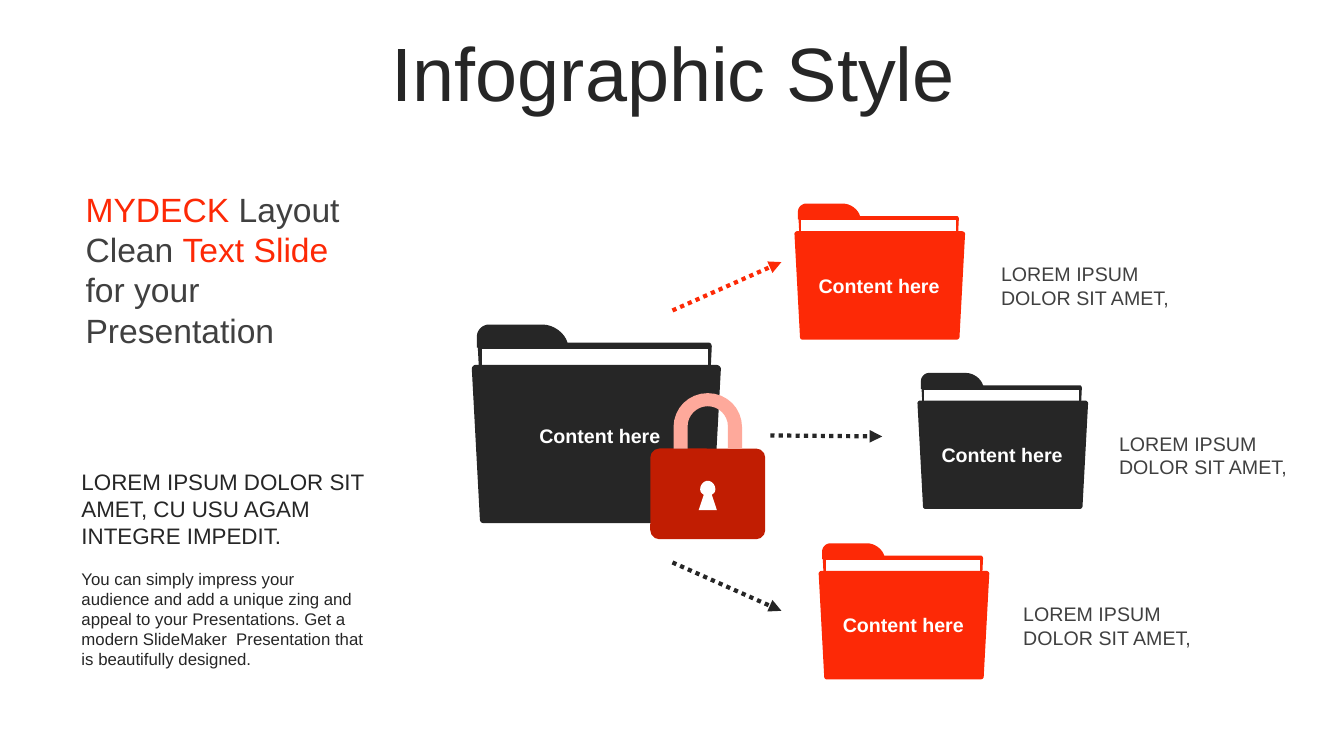
from lxml import etree
from pptx import Presentation
from pptx.dml.color import RGBColor
from pptx.enum import dml, shapes, text as txt
from pptx.oxml import ns
from pptx.util import Inches, Pt

HUES = {"dark": "262626", "gray": "404040", "red": "FD2906",
        "deep": "C11D02", "pink": "FEA99B", "white": "FFFFFF"}
STEPS = 8

# Outlines in inches: a pair is a corner, a six-tuple is a Bezier curve.
BACK = [(2.35, .18), (.95, .18), (.92, .08, .81, 0, .7, 0), (.17, 0),
        (.11, 0, .05, .05, .05, .12), (.05, .23), (.06, .23), (.13, 1.66),
        (.13, 1.68, .15, 1.7, .17, 1.7), (2.27, 1.7),
        (2.3, 1.7, 2.31, 1.68, 2.31, 1.66), (2.38, .22),
        (2.38, .2, 2.37, .18, 2.35, .18)]
PAPER = [(.1, .24), (2.34, .24), (2.34, 1.64), (.1, 1.64)]
FRONT = [(2.35, 1.97), (.12, 1.97), (.09, 1.97, .08, 1.95, .08, 1.93),
         (0, .44), (0, .42, .02, .4, .04, .4), (2.42, .4),
         (2.45, .4, 2.47, .42, 2.47, .44), (2.39, 1.93),
         (2.39, 1.95, 2.37, 1.97, 2.35, 1.97)]
SHACKLE = [(.37, .55), (.37, .33), (.37, .22, .46, .13, .57, .13),
           (.68, .13, .77, .22, .77, .33), (.77, .55), (.91, .55), (.91, .34),
           (.91, .15, .76, 0, .57, 0), (.38, 0, .23, .15, .23, .34),
           (.23, .55)]
KEYHOLE = [(.57, .87), (.61, .87, .645, .91, .645, .95),
           (.645, .97, .64, .99, .62, 1), (.61, 1.01), (.66, 1.16),
           (.48, 1.16), (.53, 1.01), (.52, 1),
           (.5, .99, .495, .97, .495, .95), (.495, .91, .53, .87, .57, .87)]


def paint(shape, hue):
    shape.shadow.inherit = False
    shape.fill.solid()
    shape.fill.fore_color.rgb = RGBColor.from_string(HUES[hue])
    shape.line.fill.background()


def write(slide, box, *paras, size=14, hue="dark", bold=False, align="LEFT",
          anchor="MIDDLE", space=None):
    """Add a text box; a paragraph is a string or a list of (text, hue)."""
    frame = slide.shapes.add_textbox(*map(Inches, box)).text_frame
    frame.word_wrap = True
    frame.vertical_anchor = getattr(txt.MSO_ANCHOR, anchor)
    for i, parts in enumerate(paras):
        para = frame.add_paragraph() if i else frame.paragraphs[0]
        para.alignment = getattr(txt.PP_ALIGN, align)
        para.line_spacing = space
        for words, tone in [(parts, hue)] if isinstance(parts, str) else parts:
            run = para.add_run()
            run.text = words
            run.font.name, run.font.size, run.font.bold = "Arial", Pt(size), bold
            run.font.color.rgb = RGBColor.from_string(HUES[tone])


def trace(steps):
    """Turn an outline into points, sampling its curves."""
    points = []
    for step in steps:
        if len(step) == 2:
            points.append(step)
            continue
        nodes = [points[-1], step[:2], step[2:4], step[4:]]
        for i in range(1, STEPS + 1):
            t = i / STEPS
            u = 1 - t
            weights = (u ** 3, 3 * u * u * t, 3 * u * t * t, t ** 3)
            points.append(tuple(sum(w * n[axis] for w, n in zip(weights, nodes))
                                for axis in (0, 1)))
    return points


def draw(slide, x, y, steps, hue, scale=1):
    spots = [(Inches(x + px * scale), Inches(y + py * scale))
             for px, py in trace(steps)]
    pen = slide.shapes.build_freeform(*spots[0], scale=1.0)
    pen.add_line_segments(spots[1:], close=True)
    paint(pen.convert_to_shape(), hue)


def folder(slide, x, y, hue, scale=1):
    for steps, tone in ((BACK, hue), (PAPER, "white"), (FRONT, hue)):
        draw(slide, x, y, steps, tone, scale)


def label(slide, x, y):
    write(slide, (x, y, 1.48, .34), "Content here", hue="white", bold=True,
          align="CENTER")


def branch(slide, x, y, hue, gap):
    """Small folder with its label and the caption to its right."""
    folder(slide, x, y, hue, .685)
    label(slide, x + .1, y + .64)
    write(slide, (x + gap, y + .53, 2.01, .57), "LOREM IPSUM DOLOR SIT AMET,",
          hue="gray")


def lock(slide, x, y):
    body = slide.shapes.add_shape(shapes.MSO_SHAPE.ROUNDED_RECTANGLE, Inches(x),
                                  Inches(y + .55), Inches(1.14), Inches(.9))
    body.adjustments[0] = .1
    paint(body, "deep")
    draw(slide, x, y, SHACKLE, "pink")
    draw(slide, x, y, KEYHOLE, "white")


def arrow(slide, ends, hue):
    link = slide.shapes.add_connector(shapes.MSO_CONNECTOR.STRAIGHT,
                                      *map(Inches, ends))
    link.line.width = Pt(3)
    link.line.color.rgb = RGBColor.from_string(HUES[hue])
    link.line.dash_style = dml.MSO_LINE.ROUND_DOT
    props = link.line._get_or_add_ln()
    etree.SubElement(props, ns.qn("a:tailEnd"), type="triangle")
    etree.SubElement(link._element.spPr, ns.qn("a:effectLst"))


def intro(slide, x, y):
    """Left column: headline, lead and body copy."""
    write(slide, (x + .04, y, 2.92, 1.72),
          [("MYDECK ", "red"), ("Layout", "gray")],
          [("Clean ", "gray"), ("Text Slide ", "red"),
           ("for your Presentation", "gray")], size=24)
    write(slide, (x, y + 2.78, 3.01, .91),
          "LOREM IPSUM DOLOR SIT AMET, CU USU AGAM INTEGRE IMPEDIT.", size=16)
    write(slide, (x, y + 3.78, 3.01, 1.11),
          "You can simply impress your audience and add a unique zing and "
          "appeal to your Presentations. Get a modern SlideMaker  Presentation "
          "that is beautifully designed.", size=12, anchor="TOP")


def diagram(slide, x, y):
    """Locked main folder with arrows to three branches."""
    folder(slide, x, y, "dark")
    for dx, dy, hue, gap in ((3.2, -1.2, "red", 1.95), (4.42, .48, "dark", 1.9),
                             (3.44, 2.17, "red", 1.93)):
        branch(slide, x + dx, y + dy, hue, gap)
    lock(slide, x + 1.77, y + .68)
    for x1, y1, x2, y2, hue in ((1.99, -.14, 3.07, -.62, "red"),
                                (2.96, 1.1, 4.07, 1.11, "dark"),
                                (1.99, 2.36, 3.07, 2.84, "dark")):
        arrow(slide, (x + x1, y + y1, x + x2, y + y2), hue)
    label(slide, x + .53, y + .93)


def main():
    deck = Presentation()
    deck.slide_width, deck.slide_height = Inches(13.33), Inches(7.5)
    slide = deck.slides.add_slide(deck.slide_layouts[6])
    write(slide, (.35, .37, 12.66, .79), "Infographic Style", size=54,
          align="CENTER", space=.9)
    intro(slide, .71, 1.81)
    diagram(slide, 4.68, 3.22)
    deck.save("out.pptx")


if __name__ == "__main__":
    main()
